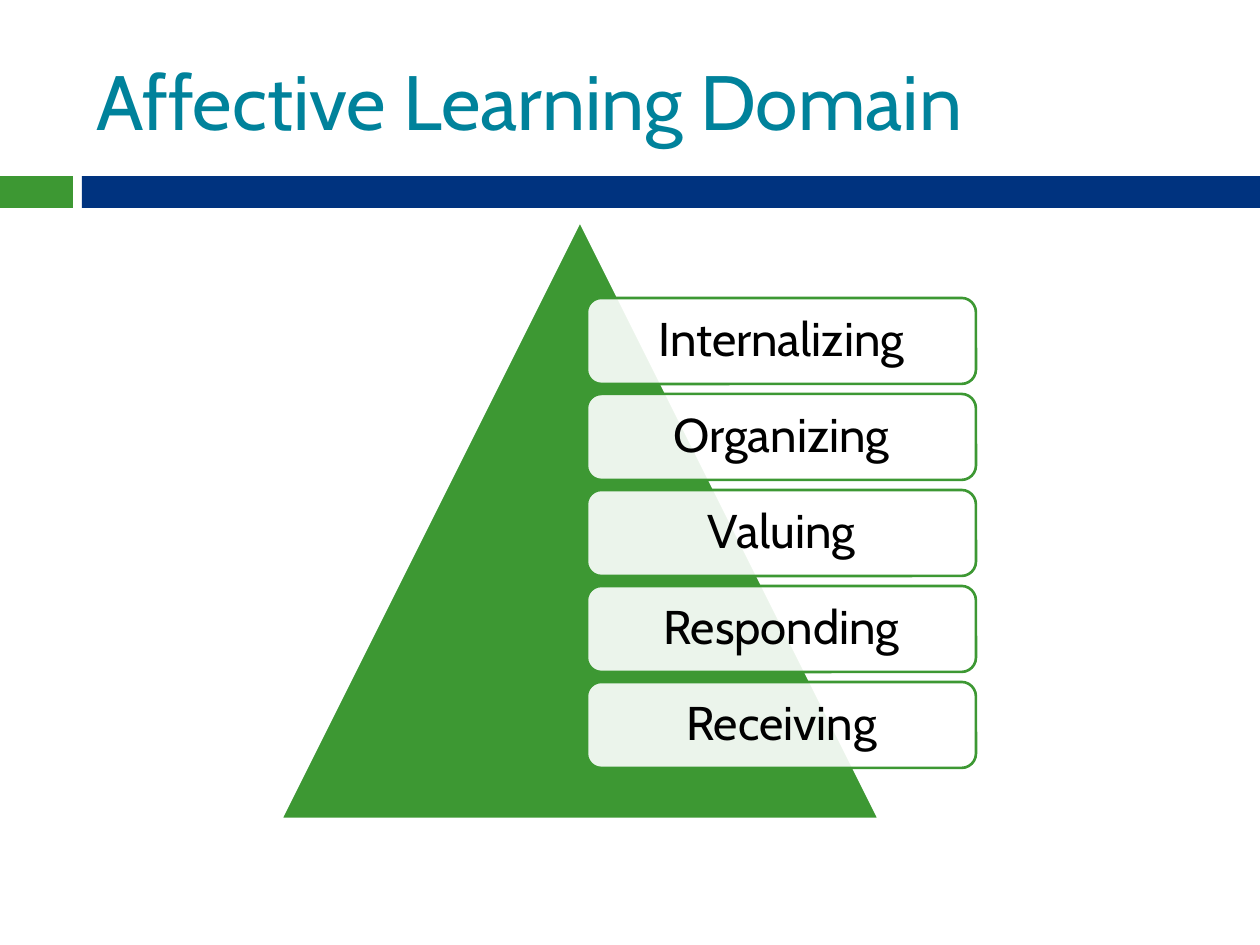
from typing import NamedTuple

from lxml.etree import SubElement
from pptx import Presentation
from pptx.dml.color import RGBColor
from pptx.enum.shapes import MSO_SHAPE
from pptx.enum.text import MSO_ANCHOR, PP_ALIGN
from pptx.oxml.ns import qn
from pptx.util import Pt

PX = 914400 // 126
FONT = "Cabin"
GREEN, NAVY, TEAL, WHITE, BLACK = "3D9833", "00337F", "00829B", "FFFFFF", "000000"
LEVELS = ["Internalizing", "Organizing", "Valuing", "Responding", "Receiving"]
LEVEL_PITCH = 96


class Box(NamedTuple):
    x: int
    y: int
    w: int
    h: int

    def emu(self) -> list[int]:
        return [v * PX for v in self]


def rgb(color: str) -> RGBColor:
    return RGBColor.from_string(color)


def add_shape(s, kind: MSO_SHAPE, box: Box, fill: str, line: str | None = None):
    sp = s.shapes.add_shape(kind, *box.emu())
    sp.shadow.inherit = False
    sp.fill.solid()
    sp.fill.fore_color.rgb = rgb(fill)
    if line:
        sp.line.color.rgb = rgb(line)
        sp.line.width = Pt(1.5)
    else:
        sp.line.fill.background()
    return sp


def set_text(sp, text: str, size: int, color: str, align: PP_ALIGN):
    tf = sp.text_frame
    tf.word_wrap = True
    tf.vertical_anchor = MSO_ANCHOR.MIDDLE
    p = tf.paragraphs[0]
    p.text = text
    p.alignment = align
    p.font.name = FONT
    p.font.size = Pt(size)
    p.font.color.rgb = rgb(color)
    return p


def set_opacity(sp, percent: int) -> None:
    color = sp.fill._xPr.find(qn("a:solidFill"))[0]
    SubElement(color, qn("a:alpha"), val=str(percent * 1000))


def add_level(s, text: str, box: Box) -> None:
    sp = add_shape(s, MSO_SHAPE.ROUNDED_RECTANGLE, box, WHITE, GREEN)
    set_opacity(sp, 90)
    p = set_text(sp, text, 27, BLACK, PP_ALIGN.CENTER)
    p.line_spacing = 0.9


def main() -> None:
    prs = Presentation()
    prs.slide_width, prs.slide_height = 1260 * PX, 945 * PX
    s = prs.slides.add_slide(prs.slide_layouts[6])

    add_shape(s, MSO_SHAPE.RECTANGLE, Box(0, 176, 73, 32), GREEN)
    add_shape(s, MSO_SHAPE.RECTANGLE, Box(82, 176, 1178, 32), NAVY)
    title = s.shapes.add_textbox(*Box(84, 32, 1124, 136).emu())
    set_text(title, "Affective Learning Domain", 44, TEAL, PP_ALIGN.LEFT)

    add_shape(s, MSO_SHAPE.ISOSCELES_TRIANGLE, Box(281, 221, 598, 598), GREEN, WHITE)
    for i, level in enumerate(LEVELS):
        add_level(s, level, Box(587, 298 + i * LEVEL_PITCH, 389, 86))

    prs.save("out.pptx")


if __name__ == "__main__":
    main()
